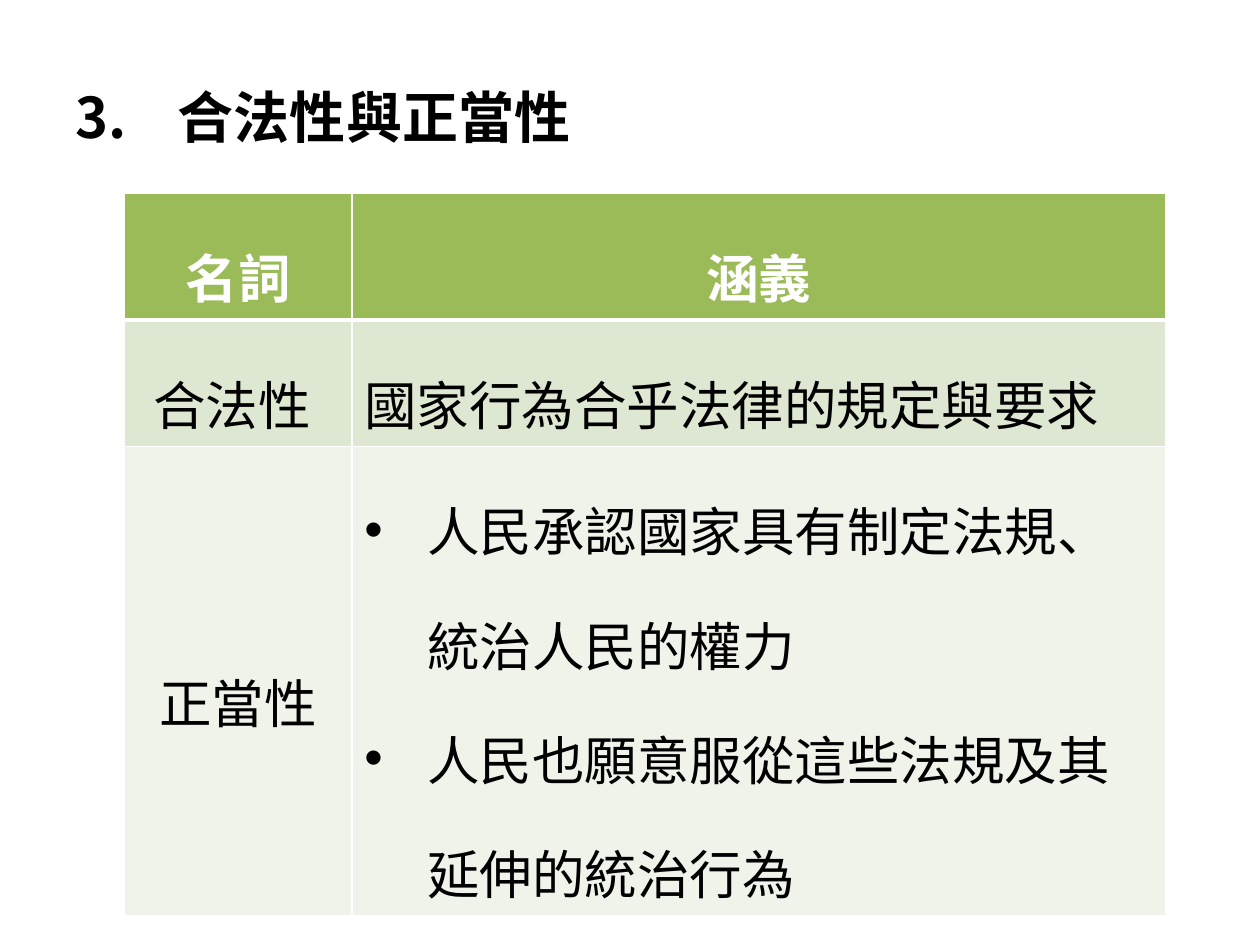
from pptx import Presentation
from pptx.dml.color import RGBColor
from pptx.enum.text import MSO_ANCHOR as ANCHOR, PP_ALIGN as ALIGN
from pptx.oxml.ns import qn
from pptx.util import Pt
from lxml.etree import SubElement, Element

FONT = "Noto Sans CJK SC"


def style(p, size, color, bold):
    for r in p.runs:
        r.font.size, r.font.bold, r.font.name = Pt(size), bold, FONT
        r.font.color.rgb = RGBColor.from_string(color)
        SubElement(r._r.get_or_add_rPr(), qn("a:ea"), typeface=FONT)


def bullet(p, indent, tag, **attrs):
    pPr = p._p.get_or_add_pPr()
    pPr.set("marL", str(Pt(indent)))
    pPr.set("indent", str(-Pt(indent)))
    if tag == "a:buChar":
        SubElement(pPr, qn("a:buFont"), typeface="Arial")
    SubElement(pPr, qn(tag), **attrs)


prs = Presentation()
prs.slide_width, prs.slide_height = Pt(720), Pt(540)
s = prs.slides.add_slide(prs.slide_layouts[5])

# Numbered title
title = s.shapes.title
title.left, title.top, title.width, title.height = Pt(36), Pt(21.6), Pt(648), Pt(90)
tf = title.text_frame
tf.text = "合法性與正當性"
tf.vertical_anchor = ANCHOR.MIDDLE
p = tf.paragraphs[0]
p.alignment = ALIGN.LEFT
bullet(p, 58.5, "a:buAutoNum", type="arabicPeriod", startAt="3")
style(p, 32, "000000", True)

# Table of terms and meanings
rows = [
    ("名詞", "涵義"),
    ("合法性 ", "國家行為合乎法律的規定與要求"),
    ("正當性", "人民承認國家具有制定法規、統治人民的權力\n"
              "人民也願意服從這些法規及其延伸的統治行為"),
]
fills = ["9BBB59", "DEE7D1", "EFF3EA"]
heights = [71, 71, 266]
widths = [130, 465]
table = s.shapes.add_table(3, 2, Pt(71), Pt(110.5), Pt(sum(widths)), Pt(sum(heights))).table
table.horz_banding = False
for column, width in zip(table.columns, widths):
    column.width = Pt(width)

for i, texts in enumerate(rows):
    table.rows[i].height = Pt(heights[i])
    for j, text in enumerate(texts):
        cell = table.cell(i, j)
        cell.text_frame.text = text
        if (i, j) == (2, 0):
            cell.vertical_anchor = ANCHOR.MIDDLE
        for p in cell.text_frame.paragraphs:
            p.line_spacing = 1.5
            p.alignment = ALIGN.CENTER if i == 0 or j == 0 else ALIGN.LEFT
            if (i, j) == (2, 1):
                bullet(p, 36, "a:buChar", char="•")
            style(p, 30, "FFFFFF" if i == 0 else "000000", i == 0)

        # Cell fill and white borders, thicker under the header
        cell.fill.solid()
        cell.fill.fore_color.rgb = RGBColor.from_string(fills[i])
        for k, side in enumerate("LRTB"):
            thick = (i, side) in [(0, "B"), (1, "T")]
            ln = Element(qn("a:ln" + side), w=str(Pt(3 if thick else 1)))
            SubElement(SubElement(ln, qn("a:solidFill")), qn("a:srgbClr"), val="FFFFFF")
            cell._tc.get_or_add_tcPr().insert(k, ln)

prs.save("out.pptx")
